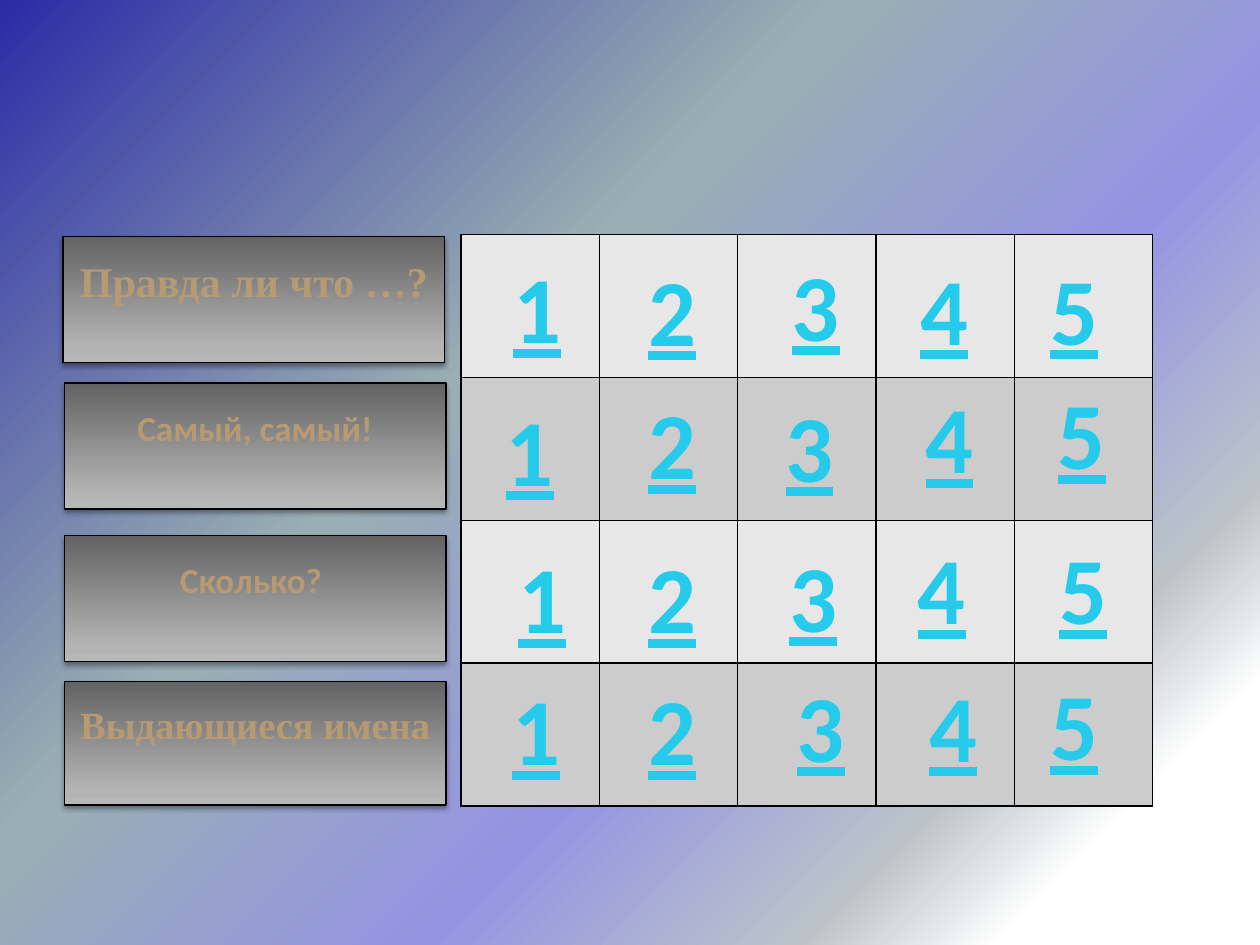
from lxml.etree import SubElement
from pptx import Presentation
from pptx.dml.color import RGBColor
from pptx.enum.shapes import MSO_SHAPE as Shape
from pptx.enum.text import MSO_ANCHOR as Anchor, MSO_AUTO_SIZE as AutoSize, PP_ALIGN as Align
from pptx.oxml import parse_xml
from pptx.oxml.ns import nsdecls, qn
from pptx.util import Inches, Pt

BLACK = RGBColor(0x00, 0x00, 0x00)
CYAN = RGBColor(0x26, 0xCB, 0xEC)
WHITE = RGBColor(0xFF, 0xFF, 0xFF)
ROW_COLORS = [RGBColor(0xE7, 0xE7, 0xE7), RGBColor(0xCC, 0xCC, 0xCC)]

BACKDROP = [(0, "2B2BA6"), (38, "9AAFB3"), (62, "9494E3"),
            (79, "BBC3C9"), (88, "FFFFFF"), (100, "FFFFFF")]
PANEL = [(0, "B8B8B8"), (12, "B4B4B4"), (100, "636363")]
GOLD = [(0, "B99E7A"), (25, "B79A72"), (50, "A4875B"), (75, "B79A72"), (100, "B99E7A")]

CATEGORIES = [
    ("Правда ли что …? ", "Times New Roman", 24, 0.5, 1.88, 1),
    ("Самый, самый!", "Calibri", 20, 0.51, 3.04, 1),
    ("Сколько? ", "Calibri", 20, 0.51, 4.25, 1),
    ("Выдающиеся имена", "Times New Roman", 22, 0.51, 5.41, 0.98),
]
NUMBER_PLACES = [
    [(3.97, 1.93), (5.04, 1.95), (6.18, 1.91), (7.2, 1.94), (8.23, 1.94)],
    [(3.91, 3.06), (5.04, 3.01), (6.13, 3.03), (7.24, 2.96), (8.29, 2.93)],
    [(4.01, 4.23), (5.04, 4.23), (6.16, 4.22), (7.18, 4.16), (8.3, 4.16)],
    [(3.96, 5.28), (5.04, 5.28), (6.22, 5.25), (7.27, 5.25), (8.23, 5.24)],
]
ROWS, COLUMNS = len(NUMBER_PLACES), len(NUMBER_PLACES[0])


def set_gradient(fill, owner, stops, angle):
    fill.gradient()
    fill.gradient_angle = 360 - angle
    stop_list = owner.find(".//" + qn("a:gsLst"))
    stop_list.clear()
    for position, color in stops:
        stop = SubElement(stop_list, qn("a:gs"), pos=str(position * 1000))
        SubElement(stop, qn("a:srgbClr"), val=color)


def line_xml(tag, color, points):
    return parse_xml(
        f'<a:{tag} {nsdecls("a")} w="{Pt(points)}"><a:solidFill>'
        f'<a:srgbClr val="{color}"/></a:solidFill></a:{tag}>')


def add_centered_run(frame, text, font, size):
    para = frame.paragraphs[0]
    para.alignment = Align.CENTER
    span = para.add_run()
    span.text = text
    span.font.name, span.font.size, span.font.bold = font, Pt(size), True
    return span


def add_category(page, text, font, size, left, top, height):
    box = page.shapes.add_shape(Shape.RECTANGLE, Inches(left), Inches(top),
                                Inches(3.03), Inches(height))
    set_gradient(box.fill, box.element, PANEL, 270)
    box.line.color.rgb = BLACK
    box.line.width = Pt(0.75)
    box.element.spPr.append(parse_xml(
        f'<a:effectLst {nsdecls("a")}><a:outerShdw blurRad="{Pt(3.1)}" dist="{Pt(1.6)}" '
        f'dir="5400000" rotWithShape="0"><a:srgbClr val="{BLACK}"><a:alpha val="38000"/>'
        '</a:srgbClr></a:outerShdw></a:effectLst>'))
    frame = box.text_frame
    frame.word_wrap = True
    frame.vertical_anchor = Anchor.MIDDLE
    frame.margin_bottom = Inches(0.35)
    span = add_centered_run(frame, text, font, size)
    set_gradient(span.font.fill, span._r, GOLD, 90)


def add_grid(page):
    table = page.shapes.add_table(ROWS, COLUMNS, Inches(3.66), Inches(1.86),
                                  Inches(5.49), Inches(4.54)).table
    for row in range(ROWS):
        for column in range(COLUMNS):
            cell = table.cell(row, column)
            properties = cell._tc.get_or_add_tcPr()
            for side in ("lnL", "lnR", "lnT", "lnB"):
                properties.append(line_xml(side, BLACK, 1))
            cell.fill.solid()
            cell.fill.fore_color.rgb = ROW_COLORS[row % 2]


def add_number(page, number, left, top):
    box = page.shapes.add_textbox(Inches(left), Inches(top), Inches(0.59), Inches(1.01))
    frame = box.text_frame
    frame.word_wrap = False
    frame.auto_size = AutoSize.SHAPE_TO_FIT_TEXT
    span = add_centered_run(frame, str(number), "Calibri", 54)
    span.font.underline = True
    span.font.color.rgb = CYAN
    span._r.get_or_add_rPr().insert(0, line_xml("ln", WHITE, 1.4))


def main():
    deck = Presentation()
    deck.slide_width, deck.slide_height = Inches(10), Inches(7.5)
    page = deck.slides.add_slide(deck.slide_layouts[6])
    set_gradient(page.background.fill, page.element, BACKDROP, 45)
    for category in CATEGORIES:
        add_category(page, *category)
    add_grid(page)
    for places in NUMBER_PLACES:
        for number, place in enumerate(places, 1):
            add_number(page, number, *place)
    deck.save("out.pptx")


if __name__ == "__main__":
    main()
